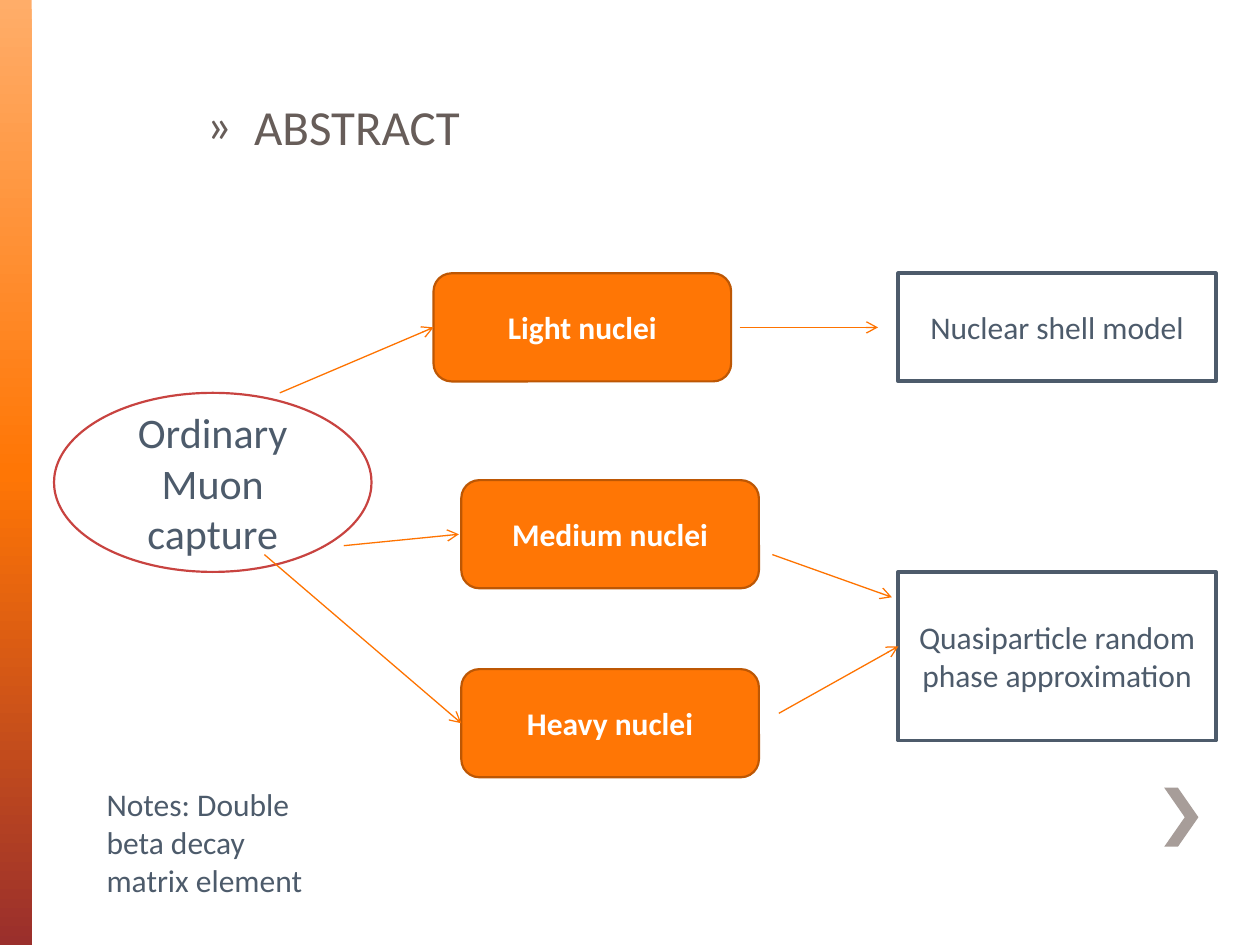
from copy import deepcopy

from lxml import etree
from pptx import Presentation
from pptx.dml.color import RGBColor
from pptx.enum.shapes import MSO_CONNECTOR, MSO_SHAPE
from pptx.enum.text import MSO_ANCHOR, PP_ALIGN
from pptx.oxml.ns import qn
from pptx.util import Cm, Pt

STRAIGHT = MSO_CONNECTOR.STRAIGHT
RECTANGLE, ROUNDED, ELLIPSE = MSO_SHAPE.RECTANGLE, MSO_SHAPE.ROUNDED_RECTANGLE, MSO_SHAPE.OVAL
TOP, MIDDLE = MSO_ANCHOR.TOP, MSO_ANCHOR.MIDDLE
LEFT, CENTER = PP_ALIGN.LEFT, PP_ALIGN.CENTER
TITLE_ONLY = 5

FONT = "Calibri"
SLATE, ORANGE, WHITE = "4D5B6B", "FF7605", "FFFFFF"
NUCLEI_SIZE = (6, 2.18)
NUCLEI = [("Light nuclei", 7.65, 0), ("Medium nuclei", 8.21, 4.17), ("Heavy nuclei", 8.21, 7.98)]
MODELS = [
    ("Nuclear shell model", 0, 2.18),
    ("Quasiparticle random phase approximation", 6.02, 3.4),
]
ARROWS = [
    (4.55, 2.41, 7.65, 1.09),
    (5.84, 5.49, 8.16, 5.26),
    (4.24, 5.67, 8.21, 9.07),
    (13.82, 1.09, 16.61, 1.09),
    (14.48, 5.67, 16.89, 6.53),
    (14.61, 8.87, 17.02, 7.52),
]


def color(value):
    return RGBColor.from_string(value)


def lengths(*values):
    return [Cm(value) for value in values]


def write(shape, text, size, ink, align=LEFT, anchor=TOP, bold=False):
    frame = shape.text_frame
    frame.word_wrap = True
    frame.vertical_anchor = anchor
    para = frame.paragraphs[0]
    para.alignment = align
    span = para.add_run()
    span.text = text
    span.font.name = FONT
    span.font.size = Pt(size)
    span.font.bold = bold
    span.font.color.rgb = color(ink)
    return para


def add_node(page, kind, box, text, size, fill, line, width, ink=SLATE, bold=False):
    node = page.shapes.add_shape(kind, *lengths(*box))
    node.shadow.inherit = False
    node.fill.solid()
    node.fill.fore_color.rgb = color(fill)
    node.line.color.rgb = color(line)
    node.line.width = Pt(width)
    write(node, text, size, ink, CENTER, MIDDLE, bold)


def add_arrow(page, ends):
    arrow = page.shapes.add_connector(STRAIGHT, *lengths(*ends))
    arrow.line.color.rgb = color("FE7300")
    arrow.line.width = Pt(0.75)
    etree.SubElement(arrow.line._get_or_add_ln(), qn("a:tailEnd"), type="arrow")
    etree.SubElement(arrow._element.spPr, qn("a:effectLst"))


def add_side_bar(page, box):
    bar = page.shapes.add_shape(RECTANGLE, *lengths(*box))
    bar.shadow.inherit = False
    bar.line.fill.background()
    bar.fill.gradient()
    bar.fill.gradient_angle = 270
    stop_list = bar._element.spPr.find(".//" + qn("a:gsLst"))
    stop_list.append(deepcopy(stop_list[-1]))
    for stop, place, shade in zip(bar.fill.gradient_stops, (0, 0.5, 1), ("FFAD69", ORANGE, "9A2F2C")):
        stop.color.rgb = color(shade)
        stop.position = place


def add_chevron(page, box):
    left, top, width, height = box
    notch, middle = left + 0.4 * width, top + height / 2
    right, bottom = left + width, top + height
    builder = page.shapes.build_freeform(Cm(left), Cm(top))
    corners = [
        (notch, top), (right, middle), (notch, bottom),
        (left, bottom), (right - 0.4 * width, middle),
    ]
    builder.add_line_segments([lengths(*corner) for corner in corners], close=True)
    chevron = builder.convert_to_shape()
    chevron.shadow.inherit = False
    chevron.fill.solid()
    chevron.fill.fore_color.rgb = color("A79D99")
    chevron.line.fill.background()


def add_heading(page, box):
    title = page.shapes.title
    title.left, title.top, title.width, title.height = lengths(*box)
    para = write(title, "ABSTRACT", 28, "675D59", anchor=MIDDLE)
    settings = para._p.get_or_add_pPr()
    settings.set("marL", str(Cm(0.96)))
    settings.set("indent", str(-Cm(0.96)))
    etree.SubElement(settings, qn("a:buFont"), typeface=FONT)
    etree.SubElement(settings, qn("a:buChar"), char="»")


def add_diagram(page, left, top):
    add_node(page, ELLIPSE, (left, top + 2.41, 6.4, 3.61), "Ordinary Muon capture",
             24, WHITE, "C84340", 1.25)
    for text, across, down in NUCLEI:
        add_node(page, ROUNDED, (left + across, top + down, *NUCLEI_SIZE), text,
                 18, ORANGE, "BD5704", 1.25, WHITE, True)
    for text, down, height in MODELS:
        add_node(page, RECTANGLE, (left + 17.02, top + down, 6.4, height), text,
                 18, WHITE, SLATE, 2.25)
    for x1, y1, x2, y2 in ARROWS:
        add_arrow(page, (left + x1, top + y1, left + x2, top + y2))


def add_remark(page, box):
    remark = page.shapes.add_textbox(*lengths(*box))
    write(remark, "Notes: Double beta decay matrix element", 18, SLATE)


def main():
    deck = Presentation()
    deck.slide_width, deck.slide_height = lengths(25.4, 19.05)
    page = deck.slides.add_slide(deck.slide_layouts[TITLE_ONLY])
    add_side_bar(page, (0, 0, 0.64, 19.05))
    add_chevron(page, (23.47, 15.88, 0.69, 1.19))
    add_heading(page, (3.91, 1.73, 7, 1.6))
    add_diagram(page, 1.09, 5.51)
    add_remark(page, (1.9, 15.7, 5.03, 2.57))
    deck.save("out.pptx")


if __name__ == "__main__":
    main()
